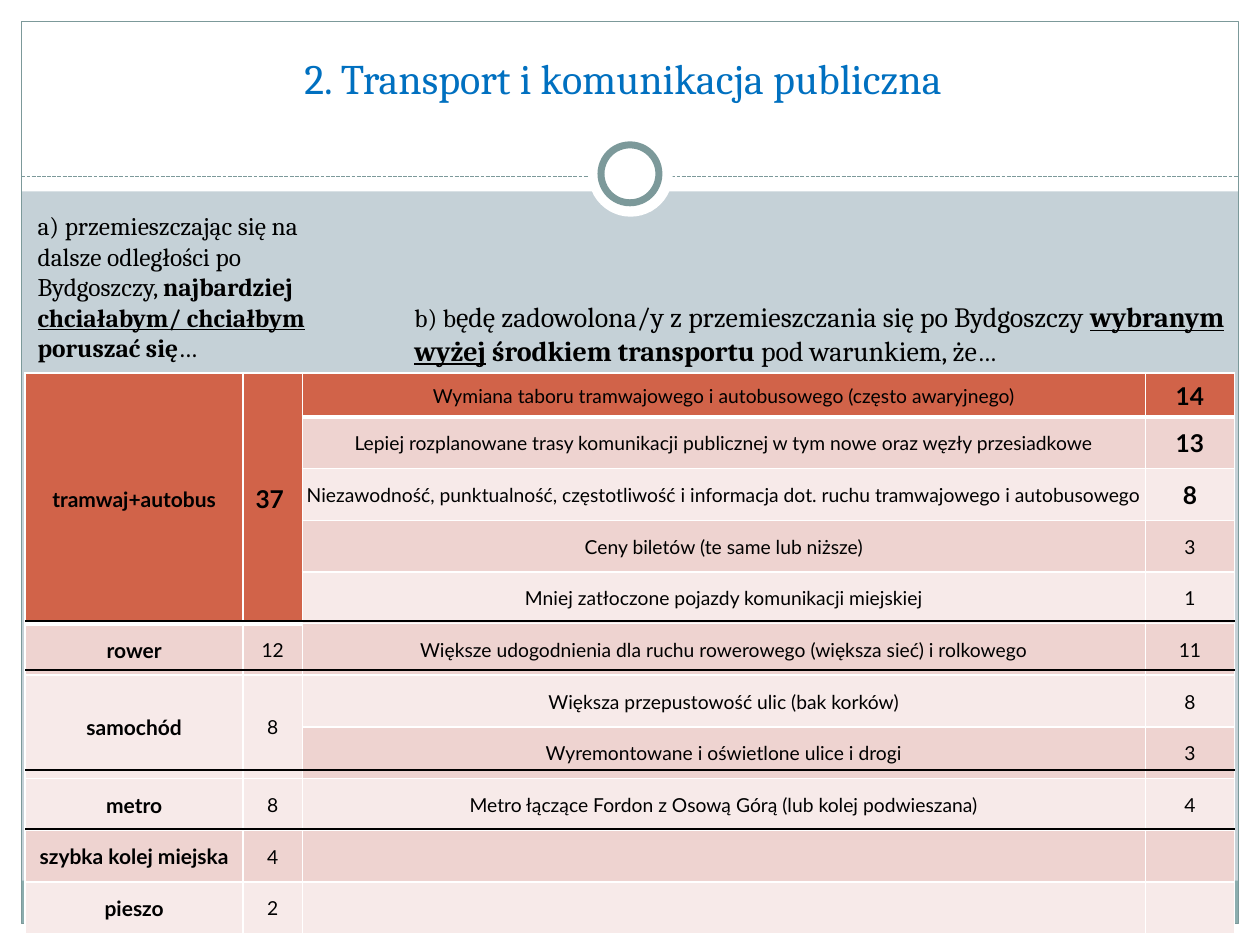
from lxml.etree import SubElement
from pptx import Presentation
from pptx.dml.color import RGBColor
from pptx.enum.dml import MSO_LINE
from pptx.enum.shapes import MSO_CONNECTOR, MSO_SHAPE
from pptx.enum.text import MSO_ANCHOR, PP_ALIGN
from pptx.oxml import parse_xml
from pptx.oxml.ns import nsdecls, qn
from pptx.util import Inches, Pt

WHITE = RGBColor(0xFF, 0xFF, 0xFF)
BLACK = RGBColor(0, 0, 0)
BLUE = RGBColor(0x00, 0x70, 0xC0)
MIST = RGBColor(0xC5, 0xD1, 0xD7)
TEAL = RGBColor(0x8C, 0xAD, 0xAE)
SLATE = RGBColor(0x7C, 0x99, 0x9A)
RUST = RGBColor(0xD1, 0x63, 0x49)
ROSE = RGBColor(0xEE, 0xD3, 0xD0)
BLUSH = RGBColor(0xF7, 0xEA, 0xE9)
SERIF, SANS = "Cambria", "Lato"

COLUMN_WIDTHS = [1.73, 0.47, 6.69, 0.71]
FIRST_ROW, OTHER_ROWS = 0.35, 0.41
GROUPS = [
    ("tramwaj+autobus", "37 ", [
        ("Wymiana taboru tramwajowego i autobusowego (często awaryjnego)", "14"),
        ("Lepiej rozplanowane trasy komunikacji publicznej w tym nowe oraz węzły przesiadkowe", "13"),
        ("Niezawodność, punktualność, częstotliwość i informacja dot. ruchu tramwajowego i autobusowego", "8"),
        ("Ceny biletów (te same lub niższe)", "3"),
        ("Mniej zatłoczone pojazdy komunikacji miejskiej", "1"),
    ]),
    ("rower", "12", [
        ("Większe udogodnienia dla ruchu rowerowego (większa sieć) i rolkowego", "11"),
    ]),
    ("samochód", "8", [
        ("Większa przepustowość ulic (bak korków)", "8"),
        ("Wyremontowane i oświetlone ulice i drogi", "3"),
    ]),
    ("metro", "8", [("Metro łączące Fordon z Osową Górą (lub kolej podwieszana)", "4")]),
    ("szybka kolej miejska", "4", [("", "")]),
    ("pieszo", "2", [("", "")]),
]
TOP_ANSWERS = 3


def add_panel(page, kind, box, fill=None, line=None, width=0.75):
    """Add a flat preset shape in the box (left, top, width, height)."""
    shape = page.shapes.add_shape(kind, *map(Inches, box))
    shape.shadow.inherit = False
    if fill is None:
        shape.fill.background()
    else:
        shape.fill.solid()
        shape.fill.fore_color.rgb = fill
    if line is None:
        shape.line.fill.background()
    else:
        shape.line.color.rgb = line
        shape.line.width = Pt(width)


def add_rule(page, left, right, top, color, width):
    """Add a horizontal line without a shadow and return it."""
    rule = page.shapes.add_connector(
        MSO_CONNECTOR.STRAIGHT, Inches(left), Inches(top), Inches(right), Inches(top))
    rule.line.color.rgb = color
    rule.line.width = Pt(width)
    SubElement(rule._element.spPr, qn("a:effectLst"))
    return rule


def add_frame(page, width, height, margin=0.17):
    """Draw the white margins, border, dashed rule and ring."""
    rectangle, oval = MSO_SHAPE.RECTANGLE, MSO_SHAPE.OVAL
    inner = width - 2 * margin
    for box in [(0, height - margin, width, margin), (0, 0, width, 1.52),
                (0, 0, margin, height), (width - margin, 0, margin, height)]:
        add_panel(page, rectangle, box, WHITE)
    add_panel(page, rectangle, (margin, 6.99, inner, 0.34), TEAL)
    add_panel(page, rectangle, (margin, margin, inner, height - 2 * margin), line=SLATE)
    add_rule(page, margin, width - margin, 1.4, SLATE, 0.75).line.dash_style = MSO_LINE.SQUARE_DOT
    add_panel(page, oval, (4.67, 1.05, 0.67, 0.67), WHITE)
    add_panel(page, oval, (4.77, 1.15, 0.46, 0.46), WHITE, SLATE, 4)


def add_title(page, box, text):
    """Fill the title placeholder and bring it in front of the frame."""
    title = page.shapes.title
    title.left, title.top, title.width, title.height = map(Inches, box)
    title.text_frame.text = text
    title.text_frame.vertical_anchor = MSO_ANCHOR.BOTTOM
    para = title.text_frame.paragraphs[0]
    para.alignment = PP_ALIGN.CENTER
    para.font.name, para.font.size = SERIF, Pt(24)
    para.font.color.rgb = BLUE
    title._element.getparent().append(title._element)


def add_question(page, box, spans):
    """Add a question from spans of (text, size, bold, underline)."""
    frame = page.shapes.add_textbox(*map(Inches, box)).text_frame
    frame.word_wrap = True
    para = frame.paragraphs[0]
    para.font.name = SERIF
    para.font.color.rgb = BLACK
    for text, size, bold, underline in spans:
        span = para.add_run()
        span.text = text
        span.font.size, span.font.bold, span.font.underline = Pt(size), bold, underline


def set_borders(cell, bottom):
    """Give the cell white borders, with the bottom width in points."""
    properties = cell._tc.get_or_add_tcPr()
    for index, (side, width) in enumerate([("L", 1), ("R", 1), ("T", 1), ("B", bottom)]):
        properties.insert(index, parse_xml(
            f'<a:ln{side} {nsdecls("a")} w="{Pt(width)}"><a:solidFill>'
            f'<a:srgbClr val="{WHITE}"/></a:solidFill></a:ln{side}>'))


def fill_cell(cell, text, fill, size=11, bold=False, bottom=1):
    """Write centred text in a cell with its fill and borders."""
    cell.fill.solid()
    cell.fill.fore_color.rgb = fill
    set_borders(cell, bottom)
    cell.vertical_anchor = MSO_ANCHOR.MIDDLE
    cell.margin_left = cell.margin_right = cell.margin_top = Inches(0.01)
    cell.margin_bottom = 0
    cell.text = text
    para = cell.text_frame.paragraphs[0]
    para.alignment = PP_ALIGN.CENTER
    para.font.name, para.font.size, para.font.bold = SANS, Pt(size), bold
    para.font.color.rgb = BLACK


def add_answers(page, left, top):
    """Add the table of transport modes and their conditions."""
    count = sum(len(conditions) for _, _, conditions in GROUPS)
    height = FIRST_ROW + OTHER_ROWS * (count - 1)
    table = page.shapes.add_table(
        count, len(COLUMN_WIDTHS), Inches(left), Inches(top),
        Inches(sum(COLUMN_WIDTHS)), Inches(height)).table
    for column, width in zip(table.columns, COLUMN_WIDTHS):
        column.width = Inches(width)
    for index, row in enumerate(table.rows):
        row.height = Inches(OTHER_ROWS if index else FIRST_ROW)

    start = 0
    for mode, votes, conditions in GROUPS:
        last = start + len(conditions) - 1
        for index, (condition, score) in enumerate(conditions, start):
            fill = (ROSE if index % 2 else BLUSH) if index else RUST
            group_fill = fill if index == start else group_fill
            bottom = 1 if index else 3
            group_bottom = 1 if start else 3
            top_answer = index < TOP_ANSWERS
            first = index == start
            fill_cell(table.cell(index, 0), mode if first else "", group_fill, 12, True, group_bottom)
            fill_cell(table.cell(index, 1), votes if first else "", group_fill,
                      11 if start else 14, not start, group_bottom)
            fill_cell(table.cell(index, 2), condition, fill, bottom=bottom)
            fill_cell(table.cell(index, 3), score, fill, 14 if top_answer else 11, top_answer, bottom)
        if last > start:
            for column in (0, 1):
                table.cell(start, column).merge(table.cell(last, column))
        start = last + 1


def main():
    """Build the transport slide and save it."""
    deck = Presentation()
    deck.slide_width, deck.slide_height = Inches(10), Inches(7.5)
    page = deck.slides.add_slide(deck.slide_layouts[5])
    page.background.fill.solid()
    page.background.fill.fore_color.rgb = MIST
    add_frame(page, 10, 7.5)
    add_title(page, (0.28, 0.36, 9.33, 0.51), "2. Transport i komunikacja publiczna")
    add_answers(page, 0.2, 2.96)
    add_question(page, (0.2, 1.62, 2.6, 1.32), [
        ("a) przemieszczając się na dalsze odległości po Bydgoszczy, ", 14.5, False, False),
        ("najbardziej ", 14.5, True, False),
        ("chciałabym/ chciałbym", 14.5, True, True),
        (" poruszać się", 14.5, True, False),
        ("…", 14.5, False, False),
    ])
    add_question(page, (3.19, 2.33, 6.69, 0.64), [
        ("b) b", 14.5, False, False),
        ("ędę zadowolona/y z przemieszczania się po Bydgoszczy ", 16, False, False),
        ("wybranym wyżej", 16, True, True),
        (" środkiem transportu ", 16, True, False),
        ("pod warunkiem, że", 16, False, False),
        ("…", 14.5, False, False),
    ])
    for top in (4.93, 5.32, 6.11, 6.58):
        add_rule(page, 0.2, 9.8, top, BLACK, 1.25)
    deck.save("out.pptx")


if __name__ == "__main__":
    main()
